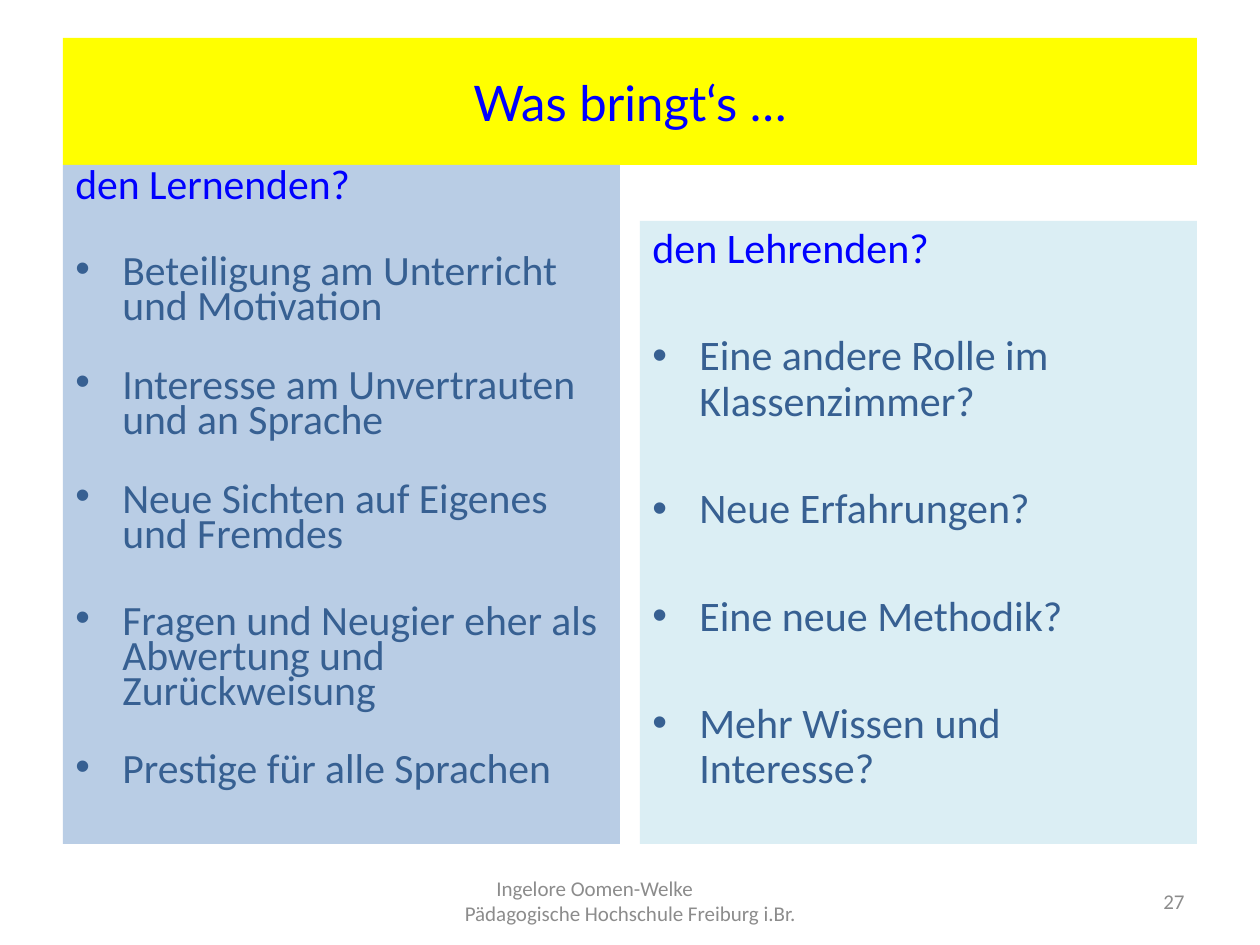
from dataclasses import dataclass
from typing import Optional

from lxml.etree import SubElement
from pptx import Presentation
from pptx.dml.color import RGBColor as Rgb
from pptx.enum.text import MSO_ANCHOR as Anchor, PP_ALIGN as Align
from pptx.oxml.ns import qn
from pptx.slide import Slide
from pptx.util import Emu, Pt

SCALE = 914400 / 126
HANGING = 47
COLORS = {
    "yellow": "FFFF00",
    "blue": "0000FF",
    "steel": "376092",
    "learners": "B9CDE5",
    "teachers": "DBEEF4",
    "grey": "8C8C8C",
}


@dataclass(frozen=True)
class Line:
    text: str
    size: float
    color: str
    font: str = "Calibri"
    align: Align = Align.LEFT
    spacing: float = 1.0
    before: float = 0
    margin: int = 0
    bullet: bool = False


@dataclass(frozen=True)
class Panel:
    left: int
    top: int
    width: int
    height: int
    lines: list[Line]
    fill: Optional[str] = None
    anchor: Anchor = Anchor.MIDDLE


def px(length: int) -> Emu:
    return Emu(round(length * SCALE))


def column(heading: str, points: list[tuple[str, float]], size: float, spacing: float) -> list[Line]:
    return [Line(heading, size, "blue", spacing=spacing, before=4.8)] + [
        Line(point, size, "steel", spacing=spacing, before=gap, margin=HANGING, bullet=True)
        for point, gap in points
    ]


def draw_panel(slide: Slide, panel: Panel) -> None:
    box = slide.shapes.add_textbox(px(panel.left), px(panel.top), px(panel.width), px(panel.height))
    if panel.fill:
        box.fill.solid()
        box.fill.fore_color.rgb = Rgb.from_string(COLORS[panel.fill])
    frame = box.text_frame
    frame.word_wrap = True
    frame.vertical_anchor = panel.anchor
    for index, line in enumerate(panel.lines):
        paragraph = frame.add_paragraph() if index else frame.paragraphs[0]
        paragraph.alignment = line.align
        paragraph.line_spacing = line.spacing
        paragraph.space_before = Pt(line.before)
        properties = paragraph._p.get_or_add_pPr()
        if line.margin:
            properties.set("marL", str(px(line.margin)))
        if line.bullet:
            properties.set("indent", str(-px(line.margin)))
            SubElement(properties, qn("a:buFont"), typeface="Arial")
            SubElement(properties, qn("a:buChar"), char="•")
        run = paragraph.add_run()
        run.text = line.text
        run.font.name = line.font
        run.font.size = Pt(line.size)
        run.font.color.rgb = Rgb.from_string(COLORS[line.color])


def main() -> None:
    learner_points = [
        ("Beteiligung am Unterricht und Motivation", 29.5),
        ("Interesse am Unvertrauten und an Sprache", 25),
        ("Neue Sichten auf Eigenes und Fremdes", 25),
        ("Fragen und Neugier eher als Abwertung und Zurückweisung", 29.5),
        ("Prestige für alle Sprachen", 25),
    ]
    teacher_points = [
        (point, 35.5)
        for point in (
            "Eine andere Rolle im Klassenzimmer?",
            "Neue Erfahrungen?",
            "Eine neue Methodik?",
            "Mehr Wissen und Interesse?",
        )
    ]
    footer = [
        Line("Ingelore Oomen-Welke", 12, "grey", margin=53),
        Line("Pädagogische Hochschule Freiburg i.Br.", 12, "grey", align=Align.CENTER),
    ]
    panels = [
        Panel(63, 38, 1134, 127, [Line("Was bringt‘s …", 28, "blue", "Lato", Align.CENTER)], "yellow"),
        Panel(63, 165, 557, 679, column("den Lernenden?", learner_points, 23.8, 0.7), "learners", Anchor.TOP),
        Panel(640, 221, 557, 623, column("den Lehrenden?", teacher_points, 24, 0.9), "teachers", Anchor.TOP),
        Panel(431, 876, 399, 50, footer),
        Panel(903, 876, 294, 50, [Line("27", 12, "grey", align=Align.RIGHT)]),
    ]

    deck = Presentation()
    deck.slide_width, deck.slide_height = px(1260), px(945)
    slide = deck.slides.add_slide(deck.slide_layouts[6])
    for panel in panels:
        draw_panel(slide, panel)
    deck.save("out.pptx")


if __name__ == "__main__":
    main()
